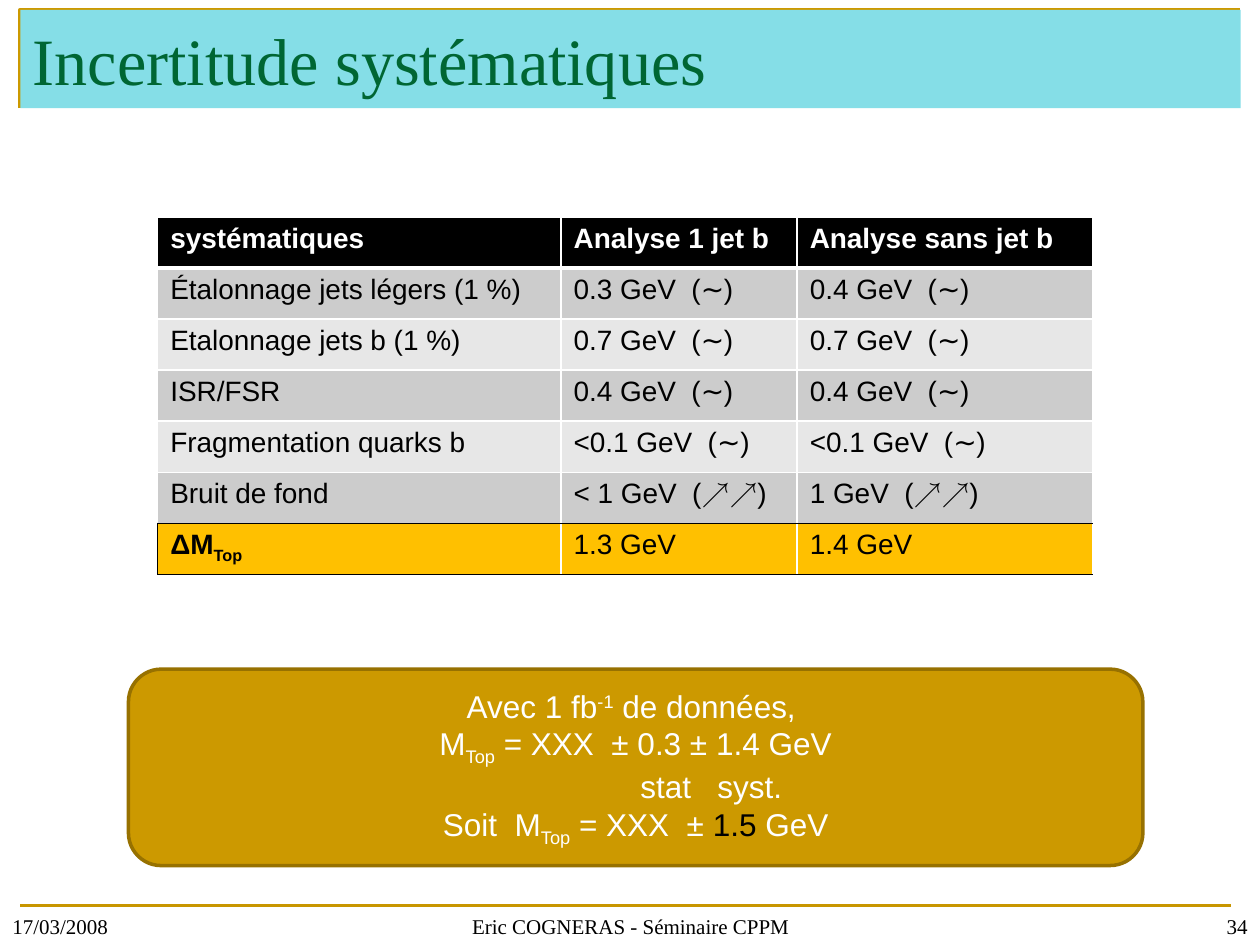
from dataclasses import dataclass

from lxml import etree
from pptx import Presentation
from pptx import util as u
from pptx.dml.color import RGBColor
from pptx.enum import shapes, text
from pptx.oxml import ns

Cm = u.Cm


@dataclass(frozen=True)
class Theme:
    white: str = "FFFFFF"
    black: str = "000000"
    gold: str = "CC9900"
    rule: str = "C89600"
    edge: str = "977100"
    aqua: str = "85DEE7"
    green: str = "006633"
    total: str = "FFC000"
    bands: tuple = ("CCCCCC", "E7E7E7")
    serif: str = "Times New Roman"
    sans: str = "Arial"
    title: float = 37.8
    cell: float = 16
    note: float = 18
    foot: float = 12


T = Theme()
SUB, SUP = -25000, 30000
MASS = [("M",), ("Top", SUB)]
ROWS = [
    ("systématiques", "Analyse 1 jet b", "Analyse sans jet b"),
    ("Étalonnage jets légers (1 %)", "0.3 GeV  (∼)", "0.4 GeV  (∼)"),
    ("Etalonnage jets b (1 %)", "0.7 GeV  (∼)", "0.7 GeV  (∼)"),
    ("ISR/FSR", "0.4 GeV  (∼)", "0.4 GeV  (∼)"),
    ("Fragmentation quarks b", "<0.1 GeV  (∼)", "<0.1 GeV  (∼)"),
    ("Bruit de fond", "< 1 GeV  (↗↗)", "1 GeV  (↗↗)"),
    ([("ΔM",), ("Top", SUB)], "1.3 GeV", "1.4 GeV"),
]
NOTE = [
    [("Avec 1 fb",), ("-1", SUP), (" de données, ",)],
    MASS + [(" = XXX  ± 0.3 ± 1.4 GeV",)],
    "stat   syst.",
    [("Soit  ",)] + MASS + [(" = XXX  ± ",), ("1.5 ", 0, T.black), ("GeV",)],
]


def put(obj, **vals):
    for key, val in vals.items():
        setattr(obj, key, val)


def tint(part, color):
    part.solid()
    part.fore_color.rgb = RGBColor.from_string(color)


def stroke(line, color, width):
    tint(line.fill, color)
    line.width = u.Pt(width)


def write(para, runs, font, size, color, bold=False, align=text.PP_ALIGN.LEFT):
    para.alignment = align
    for word, base, hue in [(*run, 0, None)[:3] if len(run) < 3 else run
                            for run in ([(runs,)] if isinstance(runs, str) else runs)]:
        run = para.add_run()
        run.text = word
        put(run.font, name=font, size=u.Pt(size), bold=bold)
        run.font.color.rgb = RGBColor.from_string(hue or color)
        if base:
            run.font._element.set("baseline", str(base))


def block(slide, kind, box, fill):
    shape = slide.shapes.add_shape(kind, *map(Cm, box))
    shape.shadow.inherit = False
    tint(shape.fill, fill)
    put(shape.text_frame, word_wrap=True, vertical_anchor=text.MSO_ANCHOR.MIDDLE)
    return shape


def head(slide):
    left, top, wide, high = 0.41, 0.2, 24.6, 1.98
    pen = slide.shapes.build_freeform(Cm(left), Cm(top + high))
    pen.add_line_segments([(Cm(left), Cm(top)), (Cm(25), Cm(top))], close=False)
    frame = pen.convert_to_shape()
    frame.shadow.inherit = False
    frame.fill.background()
    stroke(frame.line, T.gold, 2.5)
    bar = block(slide, shapes.MSO_SHAPE.RECTANGLE, (left, top, wide, high), T.aqua)
    bar.line.fill.background()
    write(bar.text_frame.paragraphs[0], "Incertitude systématiques",
          T.serif, T.title, T.green)


def border(cell, sides):
    props = cell._tc.get_or_add_tcPr()
    for side in "LRTB":
        color, width = sides.get(side, (T.white, 1))
        line = etree.SubElement(props, ns.qn(f"a:ln{side}"), w=str(u.Pt(width)))
        fill = etree.SubElement(line, ns.qn("a:solidFill"))
        etree.SubElement(fill, ns.qn("a:srgbClr"), val=color)


def look(row, col):
    dark = (T.black, 1)
    last = len(ROWS) - 1
    if row == 0:
        return T.black, T.white, True, {"B": (T.white, 3)}
    if row == last:
        sides = {"T": dark, "B": dark}
        if col == 0:
            sides["L"] = dark
        return T.total, T.black, col == 0, sides
    sides = {"B": dark} if row == last - 1 else {}
    return T.bands[(row - 1) % 2], T.black, False, sides


def grid(slide):
    widths, high = (8.13, 4.76, 5.95), 1.03
    frame = slide.shapes.add_table(len(ROWS), len(widths), Cm(3.18), Cm(4.37),
                                   Cm(sum(widths)), Cm(high * len(ROWS)))
    table = frame.table
    put(table, first_row=False, horz_banding=False)
    for col, wide in zip(table.columns, widths):
        col.width = Cm(wide)
    for r, row in enumerate(ROWS):
        table.rows[r].height = Cm(high)
        for c, runs in enumerate(row):
            cell = table.cell(r, c)
            fill, color, bold, sides = look(r, c)
            border(cell, sides)
            tint(cell.fill, fill)
            write(cell.text_frame.paragraphs[0], runs, T.sans, T.cell, color, bold)


def result(slide):
    box = block(slide, shapes.MSO_SHAPE.ROUNDED_RECTANGLE,
                (2.59, 13.49, 20.45, 3.96), T.gold)
    stroke(box.line, T.edge, 2)
    frame = box.text_frame
    for i, runs in enumerate(NOTE):
        para = frame.add_paragraph() if i else frame.paragraphs[0]
        write(para, runs, T.sans, T.note, T.white, align=text.PP_ALIGN.CENTER)
    frame.paragraphs[2]._p.get_or_add_pPr().set("marL", str(Cm(3.05)))


def foot(slide):
    high = 18.26
    rule = slide.shapes.add_connector(shapes.MSO_CONNECTOR.STRAIGHT,
                                      Cm(0.41), Cm(high), Cm(24.82), Cm(high))
    stroke(rule.line, T.rule, 1.5)
    etree.SubElement(rule._element.spPr, ns.qn("a:effectLst"))
    side = text.PP_ALIGN
    for left, wide, word, align in [
        (0, 2.97, "17/03/2008", side.LEFT),
        (23.22, 2.18, "34", side.RIGHT),
        (8.69, 8.05, "Eric COGNERAS - Séminaire CPPM", side.CENTER),
    ]:
        box = slide.shapes.add_textbox(Cm(left), Cm(18.47), Cm(wide), Cm(0.58))
        put(box.text_frame, word_wrap=True, vertical_anchor=text.MSO_ANCHOR.BOTTOM)
        write(box.text_frame.paragraphs[0], word, T.serif, T.foot, T.black, align=align)


def main():
    deck = Presentation()
    put(deck, slide_width=Cm(25.4), slide_height=Cm(19.05))
    slide = deck.slides.add_slide(deck.slide_layouts[6])
    for draw in (head, grid, result, foot):
        draw(slide)
    deck.save("out.pptx")


if __name__ == "__main__":
    main()
